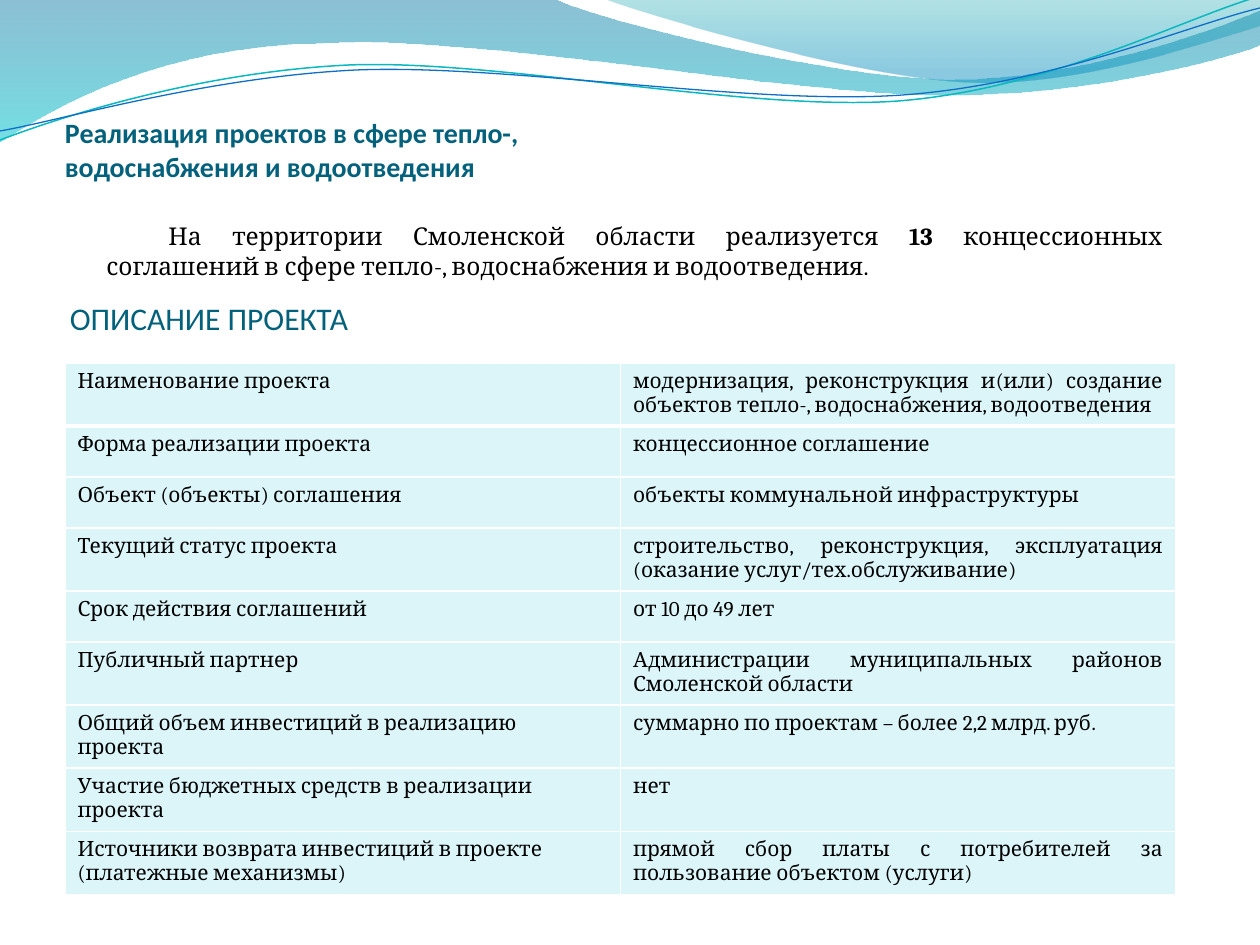
import dataclasses

import pptx
import pptx.dml.color
import pptx.enum.text
import pptx.oxml
import pptx.oxml.ns
import pptx.util

PX = 914400 / 126  # EMU in one px
ALIGN = pptx.enum.text.PP_ALIGN
ANCHOR = pptx.enum.text.MSO_ANCHOR


@dataclasses.dataclass(frozen=True)
class Theme:
    heading_font: str = "Calibri"
    body_font: str = "Cambria"
    heading: str = "04617B"
    text: str = "000000"
    cell: str = "DBF5F9"
    border: str = "FFFFFF"
    teal_line: str = "0AB8BF"
    blue_line: str = "0F6FC6"
    # Gradient stops: position, colour, opacity in percent
    wide_wave: tuple = ((0, "0074A1", 45), (1, "00C6CF", 55))
    right_wave: tuple = ((0, "00A1A9", 30), (0.8, "008BBF", 45))
    title_size: int = 16
    subtitle_size: int = 18
    body_size: int = 14
    table_size: int = 12


THEME = Theme()

ROWS = [
    ("Наименование проекта",
     "модернизация, реконструкция и(или) создание объектов тепло-, водоснабжения, водоотведения"),
    ("Форма реализации проекта", "концессионное соглашение"),
    ("Объект (объекты) соглашения", "объекты коммунальной инфраструктуры"),
    ("Текущий статус проекта",
     "строительство, реконструкция, эксплуатация (оказание услуг/тех.обслуживание)"),
    ("Срок действия соглашений", "от 10 до 49 лет"),
    ("Публичный партнер", "Администрации муниципальных районов Смоленской области"),
    ("Общий объем инвестиций в реализацию проекта",
     "суммарно по проектам – более 2,2 млрд. руб."),
    ("Участие бюджетных средств в реализации проекта", "нет"),
    ("Источники возврата инвестиций в проекте (платежные механизмы)",
     "прямой сбор платы с потребителей за пользование объектом (услуги)"),
]


def px(value):
    return pptx.util.Emu(round(value * PX))


def rgb(code):
    return pptx.dml.color.RGBColor.from_string(code)


def qn(tag):
    return pptx.oxml.ns.qn(tag)


def set_font(font, name, size, color, bold=False):
    font.name, font.size, font.bold = name, pptx.util.Pt(size), bold
    font.color.rgb = rgb(color)


def add_outline(page, box, kinds, points, close):
    """Draw segments by kind after the first point: L takes one point, C takes three."""
    left, top = box[:2]
    spots = [(px(left + x), px(top + y)) for x, y in points]
    builder = page.shapes.build_freeform(*spots[0], scale=1.0)
    builder.add_line_segments(spots[1:], close=close)
    shape = builder.convert_to_shape()
    shape.shadow.inherit = False
    segments = iter(list(shape._element.iter(qn("a:lnTo"))))
    for kind in kinds:
        segment = next(segments)
        if kind == "C":
            segment.tag = qn("a:cubicBezTo")
            for extra in (next(segments), next(segments)):
                segment.append(extra[0])
                extra.getparent().remove(extra)
    return shape


def add_wave(page, box, kinds, points, stops):
    shape = add_outline(page, box, kinds, points, True)
    shape.line.fill.background()
    shape.fill.gradient()
    shape.fill.gradient_angle = 270
    for stop, (position, color, _) in zip(shape.fill.gradient_stops, stops):
        stop.position = position
        stop.color.rgb = rgb(color)
    colors = shape._element.spPr.iter(qn("a:srgbClr"))
    for element, (_, _, opacity) in zip(list(colors), stops):
        element.append(pptx.oxml.parse_xml(
            f'<a:alpha {pptx.oxml.ns.nsdecls("a")} val="{opacity * 1000}"/>'))


def add_swoosh(page, box, points, color, width):
    shape = add_outline(page, box, "CCC", points, False)
    shape.fill.background()
    shape.line.color.rgb = rgb(color)
    shape.line.width = pptx.util.Pt(width)


def add_header(page, box):
    # Translucent waves
    add_wave(page, box, "LCCLCCCL",
             [(0, 0), (554, -1), (600, 21), (837, 79), (955, 79),
              (1075, 79), (1207, 33), (1260, 11), (1261, 45),
              (1239, 55), (1096, 96), (940, 95), (784, 94), (481, 35), (324, 43),
              (163, 45), (58, 105), (-1, 142), (0, 0)], THEME.wide_wave)
    add_wave(page, box, "CCLL",
             [(604, -1), (641, 14), (859, 78), (969, 82), (1079, 87), (1211, 40),
              (1260, 26), (1260, 0), (604, -1)], THEME.right_wave)
    # Thin lines
    add_swoosh(page, box, [(0, 140), (60, 117), (199, 72), (349, 65), (498, 59),
                           (747, 112), (898, 101), (1050, 89), (1182, 19), (1257, -3)],
               THEME.teal_line, 0.85)
    add_swoosh(page, box, [(0, 131), (59, 121), (207, 77), (357, 70), (508, 64),
                           (752, 106), (903, 95), (1053, 84), (1186, 26), (1260, 8)],
               THEME.blue_line, 0.75)


def add_text_frame(page, box, anchor):
    frame = page.shapes.add_textbox(*map(px, box)).text_frame
    frame.word_wrap = True
    frame.vertical_anchor = anchor
    return frame


def add_title(page, box):
    frame = add_text_frame(page, box, ANCHOR.BOTTOM)
    frame.margin_left = frame.margin_right = frame.margin_bottom = 0
    para = frame.paragraphs[0]
    para.text = "Реализация проектов в сфере тепло-, водоснабжения и водоотведения"
    set_font(para.font, THEME.heading_font, THEME.title_size, THEME.heading, True)


def add_summary(page, box):
    para = add_text_frame(page, box, ANCHOR.TOP).paragraphs[0]
    para.alignment = ALIGN.JUSTIFY
    para._p.get_or_add_pPr().set("indent", str(px(62)))
    set_font(para.font, THEME.body_font, THEME.body_size, THEME.text)
    for text, bold in (
            ("На территории Смоленской области реализуется ", False),
            ("13 ", True),
            ("концессионных соглашений в сфере тепло-, водоснабжения и водоотведения.", False)):
        span = para.add_run()
        span.text = text
        span.font.bold = bold


def add_subtitle(page, box):
    para = add_text_frame(page, box, ANCHOR.MIDDLE).paragraphs[0]
    para.text = "ОПИСАНИЕ ПРОЕКТА"
    para.alignment = ALIGN.CENTER
    set_font(para.font, THEME.heading_font, THEME.subtitle_size, THEME.heading)


def set_borders(cell, bottom_width):
    properties = cell._tc.get_or_add_tcPr()
    for index, (side, width) in enumerate(
            (("L", 1), ("R", 1), ("T", 1), ("B", bottom_width))):
        properties.insert(index, pptx.oxml.parse_xml(
            f'<a:ln{side} {pptx.oxml.ns.nsdecls("a")} w="{pptx.util.Pt(width)}"><a:solidFill>'
            f'<a:srgbClr val="{THEME.border}"/></a:solidFill></a:ln{side}>'))


def add_project_table(page, box, row_height):
    holder = page.shapes.add_table(len(ROWS), 2, *map(px, box))
    table = holder.table
    table.horz_banding = False
    for row, texts in enumerate(ROWS):
        table.rows[row].height = px(row_height)
        for column, (text, align) in enumerate(zip(texts, (ALIGN.LEFT, ALIGN.JUSTIFY))):
            cell = table.cell(row, column)
            cell.fill.solid()
            cell.fill.fore_color.rgb = rgb(THEME.cell)
            if row == 0:
                set_borders(cell, 3)
            para = cell.text_frame.paragraphs[0]
            para.text = text
            para.alignment = align
            set_font(para.font, THEME.body_font, THEME.table_size, THEME.text)
    holder.height = px(box[3])


def main():
    deck = pptx.Presentation()
    deck.slide_width, deck.slide_height = px(1260), px(945)
    page = deck.slides.add_slide(deck.slide_layouts[6])
    add_header(page, (0, 0, 1260, 142))
    add_title(page, (65, 66, 616, 117))
    add_summary(page, (94, 215, 1081, 72))
    add_subtitle(page, (35, 284, 348, 68))
    add_project_table(page, (65, 363, 1111, 508), 51)
    deck.save("out.pptx")


if __name__ == "__main__":
    main()
